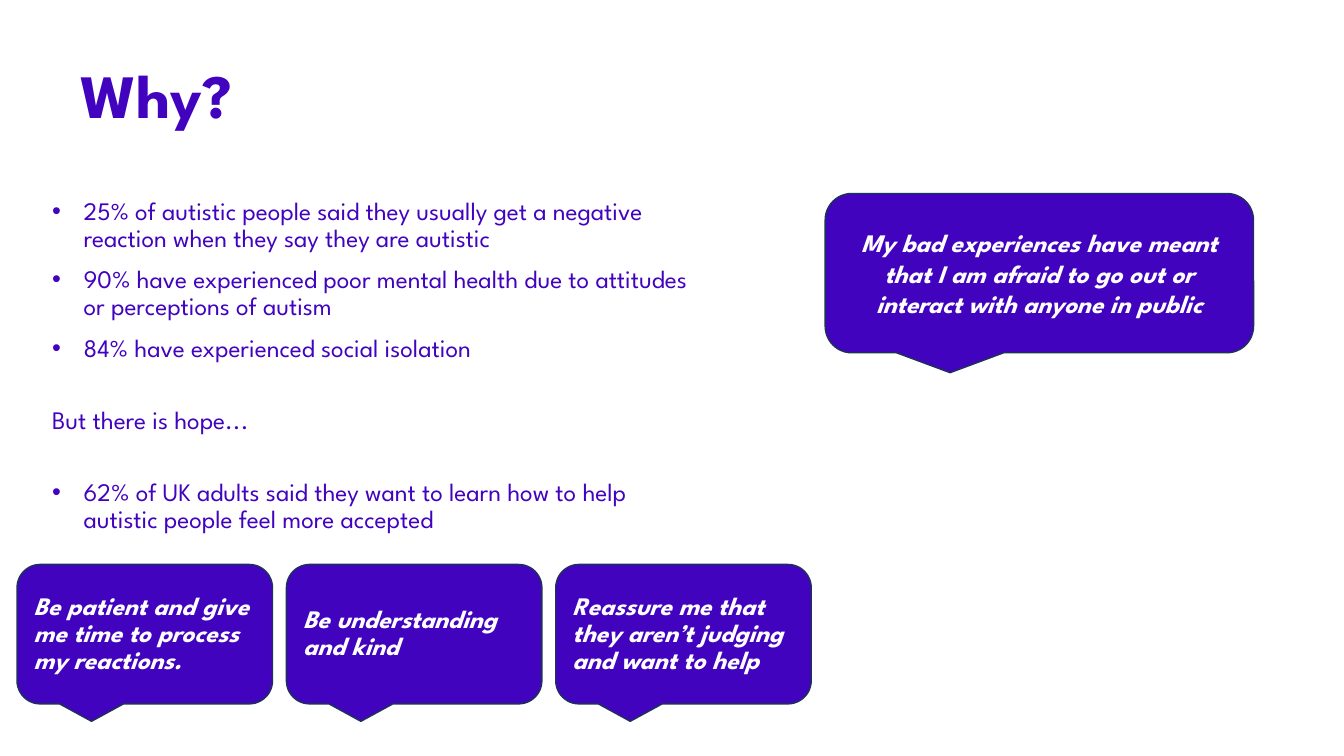
from lxml import etree
from pptx import Presentation
from pptx.dml.color import RGBColor
from pptx.enum.shapes import MSO_SHAPE
from pptx.enum.text import MSO_ANCHOR, PP_ALIGN
from pptx.oxml.ns import qn
from pptx.util import Pt

COLOURS = {"purple": "4203BF", "navy": "1E3256", "white": "FFFFFF"}
BODY = {"name": "League Spartan", "size": Pt(18)}
TITLE = {**BODY, "size": Pt(44), "bold": True}
QUOTE = {**BODY, "bold": True, "italic": True}
TIGHT = {"line_spacing": 0.9}
CENTRED = {"alignment": PP_ALIGN.CENTER}
LEFT = {"alignment": PP_ALIGN.LEFT, **TIGHT}

# text, bulleted, space before in points
REASONS = [
    ("25% of autistic people said they usually get a negative reaction "
     "when they say they are autistic", True, 0),
    ("90% have experienced poor mental health due to attitudes or "
     "perceptions of autism", True, 10),
    ("84% have experienced social isolation", True, 10),
    ("But there is hope...", False, 32),
    ("62% of UK adults said they want to learn how to help autistic people "
     "feel more accepted", True, 32),
]
EXPERIENCE = ("My bad experiences have meant that I am afraid to go out or "
              "interact with anyone in public")
REQUESTS = [
    "Be patient and give me time to process my reactions.",
    "Be understanding and kind",
    "Reassure me that they aren’t judging and want to help",
]
REQUEST_LEFT, REQUEST_STEP = 12.2, 192.4


def colour(name):
    return RGBColor.from_string(COLOURS[name])


def set_all(target, values):
    for name, value in values.items():
        setattr(target, name, value)


def write(paragraph, text, font, colour_name, layout):
    paragraph.text = text
    set_all(paragraph, layout)
    set_all(paragraph.font, font)
    paragraph.font.color.rgb = colour(colour_name)


def add_bullet(paragraph, indent=22.5):
    properties = paragraph._p.get_or_add_pPr()
    properties.set("marL", str(Pt(indent)))
    properties.set("indent", str(-Pt(indent)))
    etree.SubElement(properties, qn("a:buFont")).set("typeface", "Arial")
    etree.SubElement(properties, qn("a:buChar")).set("char", "•")


def add_text_box(slide, left, top, width, height):
    frame = slide.shapes.add_textbox(
        Pt(left), Pt(top), Pt(width), Pt(height)).text_frame
    frame.word_wrap = True
    return frame


def add_title(slide, text):
    frame = add_text_box(slide, 50.4, 43.2, 516.2, 56.2)
    write(frame.paragraphs[0], text, TITLE, "purple", TIGHT)


def add_reasons(slide):
    frame = add_text_box(slide, 30.2, 138.2, 473, 253.4)
    for index, (text, bulleted, space) in enumerate(REASONS):
        paragraph = frame.add_paragraph() if index else frame.paragraphs[0]
        if bulleted:
            add_bullet(paragraph)
        write(paragraph, text, BODY, "purple",
              {**TIGHT, "space_before": Pt(space)})


def add_callout(slide, text, left, top, width, height, layout):
    shape = slide.shapes.add_shape(
        MSO_SHAPE.ROUNDED_RECTANGULAR_CALLOUT,
        Pt(left), Pt(top), Pt(width), Pt(height))
    shape.shadow.inherit = False
    shape.fill.solid()
    shape.fill.fore_color.rgb = colour("purple")
    shape.line.color.rgb = colour("navy")
    shape.line.width = Pt(1)
    frame = shape.text_frame
    set_all(frame, {"word_wrap": True, "vertical_anchor": MSO_ANCHOR.MIDDLE})
    write(frame.paragraphs[0], text, QUOTE, "white", layout)


def main():
    presentation = Presentation()
    set_all(presentation, {"slide_width": Pt(960), "slide_height": Pt(540)})
    slide = presentation.slides.add_slide(presentation.slide_layouts[6])
    add_reasons(slide)
    add_title(slide, "Why?")
    add_callout(slide, EXPERIENCE, 589.4, 138.2, 306, 113.8, CENTRED)
    for index, request in enumerate(REQUESTS):
        left = REQUEST_LEFT + index * REQUEST_STEP
        add_callout(slide, request, left, 403.2, 182.5, 99.6, LEFT)
    presentation.save("out.pptx")


if __name__ == "__main__":
    main()
